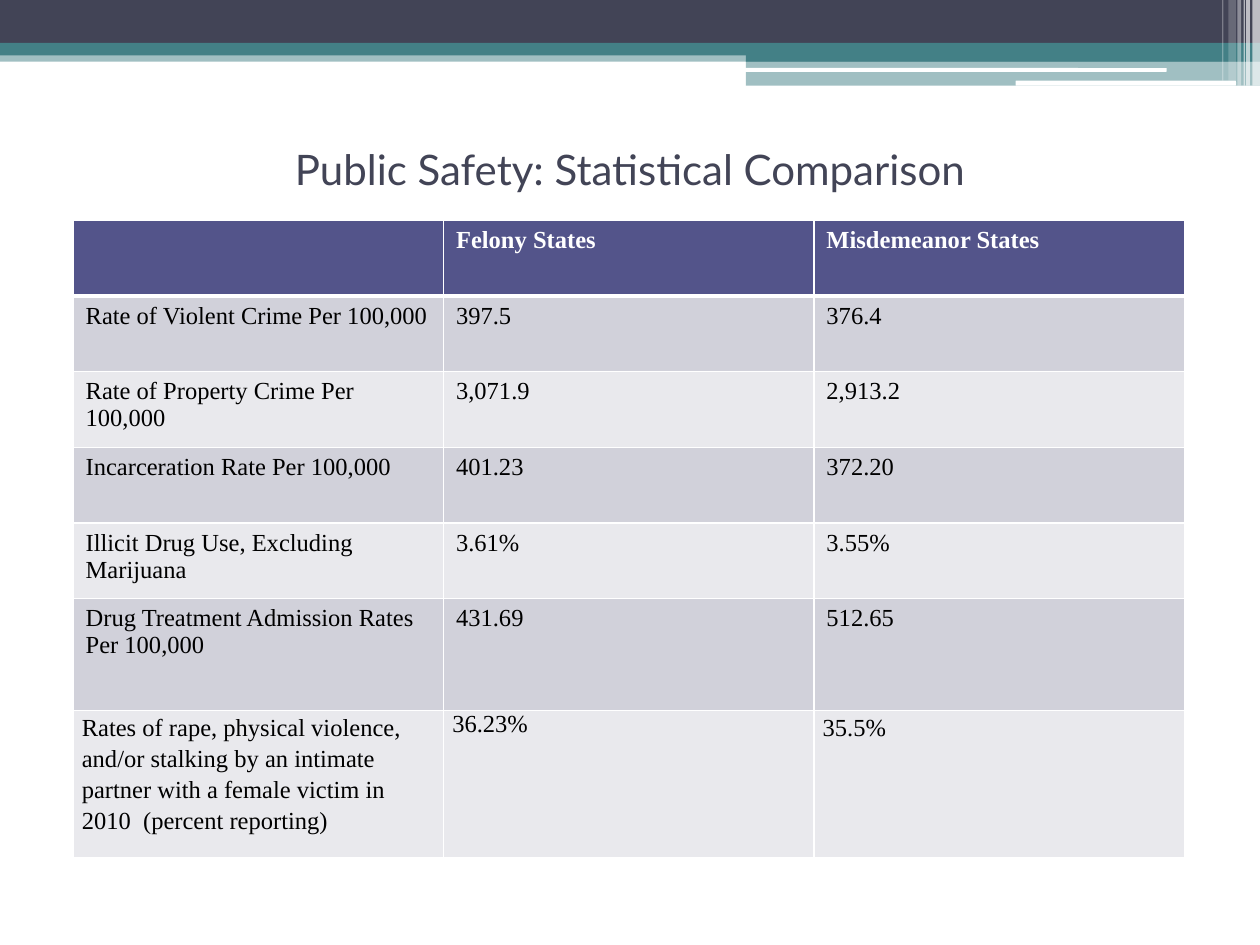
from dataclasses import dataclass

import lxml.etree
import pptx
import pptx.dml.color
import pptx.enum.shapes
import pptx.enum.text
import pptx.oxml.ns
import pptx.util

Inches = pptx.util.Inches
Pt = pptx.util.Pt
SHAPE = pptx.enum.shapes.MSO_SHAPE
qn = pptx.oxml.ns.qn

COLORS = {
    "slate": "424456",
    "teal": "438086",
    "white": "FFFFFF",
    "black": "000000",
    "header": "53548A",
    "band_dark": "D1D1DA",
    "band_light": "E9E9ED",
}


@dataclass
class Bar:
    left: float
    top: float
    width: float
    height: float
    color: str
    opacity: int = 100
    rounded: bool = False


BARS = [
    # Bands across the top
    Bar(0, 0.4, 10, 0.09, "teal", 50),
    Bar(0, 0, 10, 0.34, "slate"),
    Bar(0, 0.34, 10, 0.1, "teal"),
    Bar(5.92, 0.39, 4.08, 0.1, "teal"),
    Bar(5.92, 0.48, 4.08, 0.2, "teal", 50),
    Bar(5.91, 0.54, 3.35, 0.03, "white", rounded=True),
    Bar(8.06, 0.64, 1.75, 0.04, "white", rounded=True),
    # Vertical stripes at the right edge
    Bar(9.94, 0, 0.06, 0.68, "white", 65),
    Bar(9.89, 0, 0.03, 0.68, "white", 65),
    Bar(9.87, 0, 0.01, 0.68, "white", 60),
    Bar(9.82, 0, 0.03, 0.68, "white", 40),
    Bar(9.75, 0, 0.06, 0.64, "white", 20),
    Bar(9.7, 0, 0.01, 0.64, "white", 30),
]

ROWS = [
    ("", "Felony States", "Misdemeanor States"),
    ("Rate of Violent Crime Per 100,000", "397.5", "376.4"),
    ("Rate of Property Crime Per 100,000", "3,071.9", "2,913.2"),
    ("Incarceration Rate Per 100,000", "401.23", "372.20"),
    ("Illicit Drug Use, Excluding Marijuana", "3.61%", "3.55%"),
    ("Drug Treatment Admission Rates Per 100,000", "431.69", "512.65"),
    ("Rates of rape, physical violence, and/or stalking by an intimate partner "
     "with a female victim in 2010  (percent reporting)", "36.23%", "35.5%"),
]
ROW_HEIGHTS = [0.6] * 5 + [0.89, 1.17]
COL_WIDTH = 2.94


def rgb(name: str) -> pptx.dml.color.RGBColor:
    return pptx.dml.color.RGBColor.from_string(COLORS[name])


def draw_bar(s, bar: Bar) -> None:
    kind = SHAPE.ROUNDED_RECTANGLE if bar.rounded else SHAPE.RECTANGLE
    sp = s.shapes.add_shape(kind, Inches(bar.left), Inches(bar.top),
                            Inches(bar.width), Inches(bar.height))
    sp.shadow.inherit = False
    sp.line.fill.background()
    sp.fill.solid()
    sp.fill.fore_color.rgb = rgb(bar.color)
    if bar.opacity < 100:
        clr = sp.fill._xPr.find(".//" + qn("a:srgbClr"))
        lxml.etree.SubElement(clr, qn("a:alpha"), val=str(bar.opacity * 1000))


def style_font(p, name: str, size: float, color: str, bold: bool = False) -> None:
    for r in p.runs:
        r.font.name = name
        r.font.size = Pt(size)
        r.font.bold = bold
        r.font.color.rgb = rgb(color)


def set_borders(cell, bottom: float, top: float) -> None:
    tcPr = cell._tc.get_or_add_tcPr()
    widths = {"a:lnL": 1, "a:lnR": 1, "a:lnT": top, "a:lnB": bottom}
    for i, (tag, width) in enumerate(widths.items()):
        ln = lxml.etree.Element(qn(tag), w=str(Pt(width)))
        fill = lxml.etree.SubElement(ln, qn("a:solidFill"))
        lxml.etree.SubElement(fill, qn("a:srgbClr"), val=COLORS["white"])
        tcPr.insert(i, ln)


def fill_cell(cell, text: str, row: int, col: int) -> None:
    header, last = row == 0, row == len(ROWS) - 1
    cell.text_frame.text = text
    p = cell.text_frame.paragraphs[0]
    style_font(p, "Times New Roman", 14, "white" if header else "black", header)
    if last:
        cell.margin_left = cell.margin_right = Inches(0.07)
        cell.margin_top = cell.margin_bottom = 0
        if col != 1:
            p.line_spacing = 1.15
    cell.fill.solid()
    cell.fill.fore_color.rgb = rgb(
        "header" if header else "band_dark" if row % 2 else "band_light")
    set_borders(cell, bottom=3 if header else 1, top=3 if row == 1 else 1)


def add_stats_table(s) -> None:
    frame = s.shapes.add_table(len(ROWS), 3, Inches(0.58), Inches(1.75),
                               Inches(3 * COL_WIDTH), Inches(sum(ROW_HEIGHTS)))
    table = frame.table
    for column in table.columns:
        column.width = Inches(COL_WIDTH)
    for i, (height, texts) in enumerate(zip(ROW_HEIGHTS, ROWS)):
        table.rows[i].height = Inches(height)
        for j, text in enumerate(texts):
            fill_cell(table.cell(i, j), text, i, j)


def add_title(s, text: str) -> None:
    title = s.shapes.title
    title.left, title.top = Inches(0.5), Inches(0.75)
    title.width, title.height = Inches(9), Inches(1.17)
    tf = title.text_frame
    tf.text = text
    tf.vertical_anchor = pptx.enum.text.MSO_ANCHOR.MIDDLE
    p = tf.paragraphs[0]
    p.alignment = pptx.enum.text.PP_ALIGN.CENTER
    style_font(p, "Lato", 24, "slate")


def main() -> None:
    prs = pptx.Presentation()
    prs.slide_width, prs.slide_height = Inches(10), Inches(7.5)
    s = prs.slides.add_slide(prs.slide_layouts[5])  # Title Only
    for bar in BARS:
        draw_bar(s, bar)
    add_title(s, "Public Safety: Statistical Comparison")
    add_stats_table(s)
    prs.save("out.pptx")


if __name__ == "__main__":
    main()
